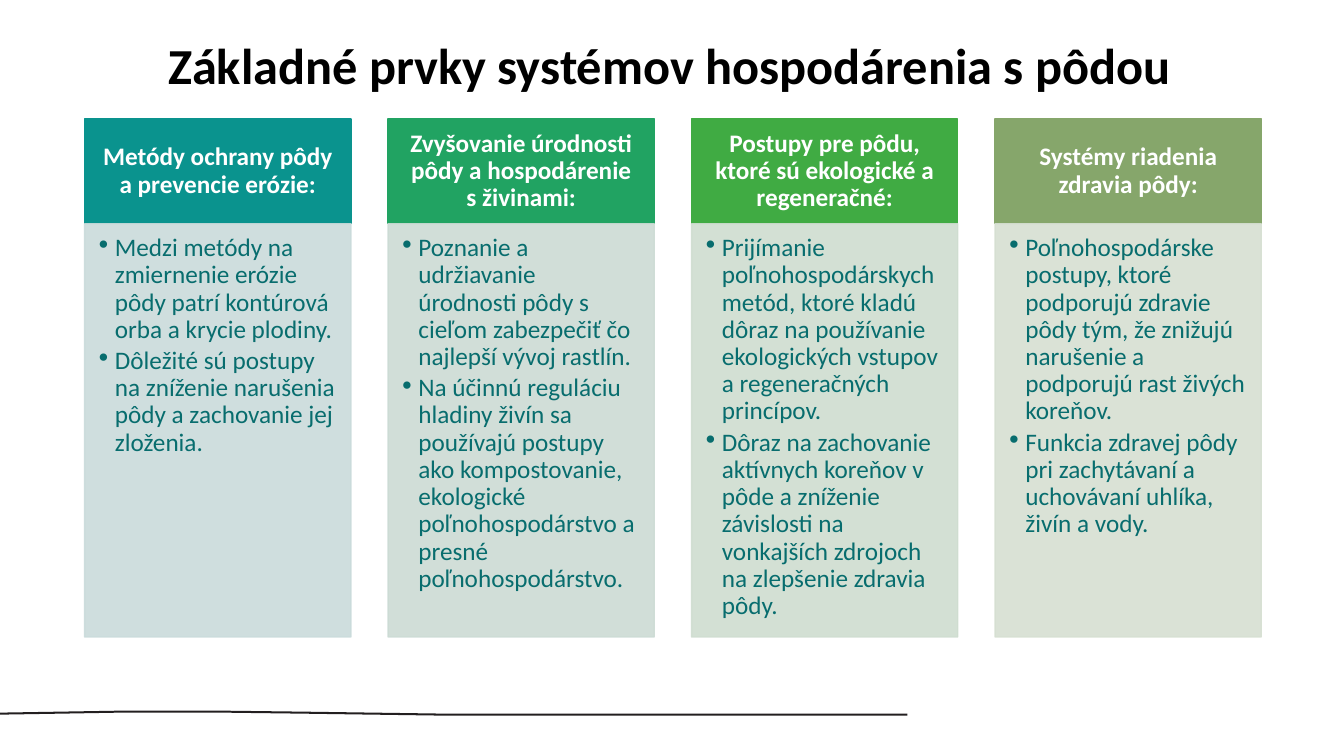
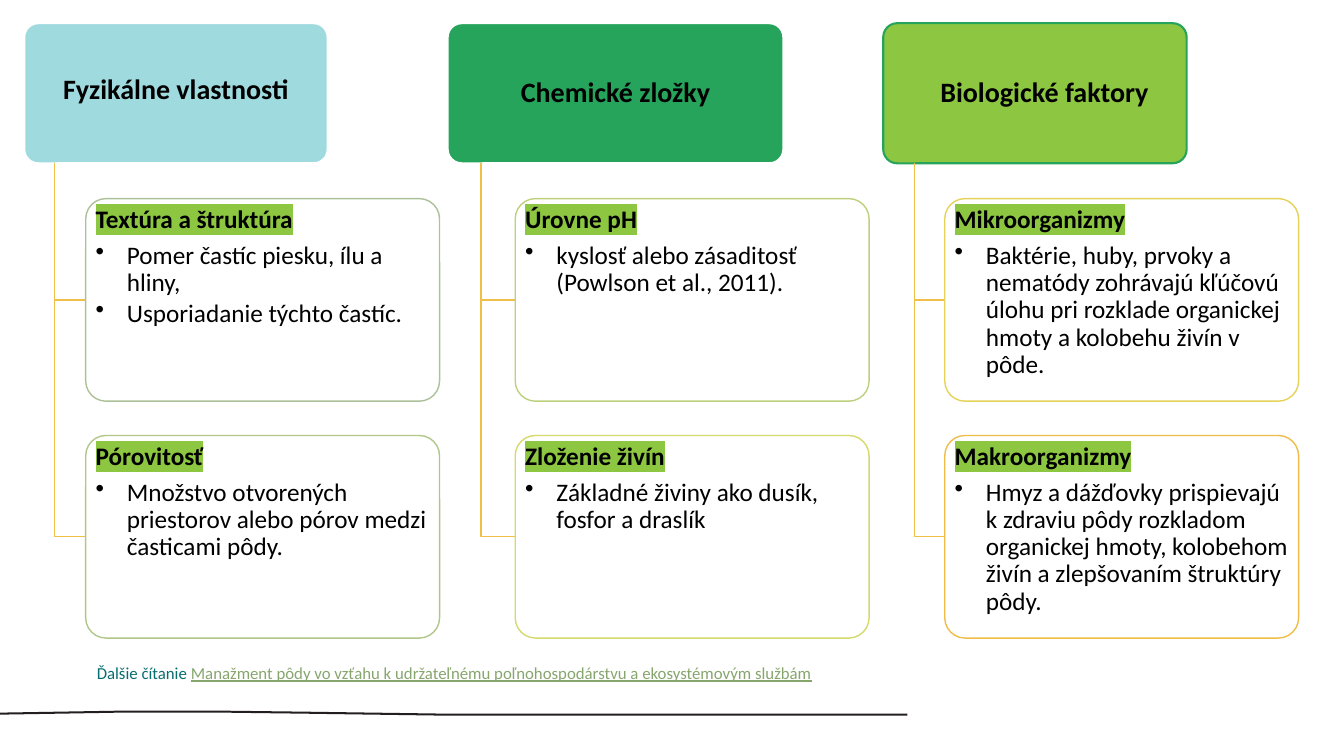
from pptx import Presentation
from pptx.dml.color import RGBColor
from pptx.enum.shapes import MSO_SHAPE as Preset
from pptx.enum.text import MSO_ANCHOR as Anchor, MSO_AUTO_SIZE as AutoSize, PP_ALIGN as Align
from pptx.oxml.ns import qn
from pptx.util import Inches, Pt
from lxml.etree import SubElement

FONT = "Calibri"
BLACK = RGBColor(0x00, 0x00, 0x00)
WHITE = RGBColor(0xFF, 0xFF, 0xFF)
INK = RGBColor(0x23, 0x1F, 0x20)
TEAL = RGBColor(0x08, 0x6D, 0x6E)
SAGE = RGBColor(0x87, 0xA6, 0x6E)
LIME = RGBColor(0x8D, 0xC6, 0x41)
GREEN = RGBColor(0x26, 0xA4, 0x5B)
AQUA = RGBColor(0x9F, 0xDA, 0xDF)
AMBER = RGBColor(0xEF, 0xBF, 0x47)

# Heading, heading colour, body colour, bullets
PRACTICES = [
    ("Metódy ochrany pôdy a prevencie erózie:",
     RGBColor(0x0A, 0x93, 0x8E), RGBColor(0xCA, 0xDB, 0xDB),
     ["Medzi metódy na zmiernenie erózie pôdy patrí kontúrová orba a krycie plodiny.",
      "Dôležité sú postupy na zníženie narušenia pôdy a zachovanie jej zloženia."]),
    ("Zvyšovanie úrodnosti pôdy a hospodárenie s živinami:",
     RGBColor(0x21, 0xA3, 0x62), RGBColor(0xCC, 0xDB, 0xD4),
     ["Poznanie a udržiavanie úrodnosti pôdy s cieľom zabezpečiť čo najlepší vývoj rastlín.",
      "Na účinnú reguláciu hladiny živín sa používajú postupy ako kompostovanie, "
      "ekologické poľnohospodárstvo a presné poľnohospodárstvo."]),
    ("Postupy pre pôdu, ktoré sú ekologické a regeneračné:",
     RGBColor(0x40, 0xAB, 0x43), RGBColor(0xCF, 0xDD, 0xD0),
     ["Prijímanie poľnohospodárskych metód, ktoré kladú dôraz na používanie "
      "ekologických vstupov a regeneračných princípov.",
      "Dôraz na zachovanie aktívnych koreňov v pôde a zníženie závislosti na "
      "vonkajších zdrojoch na zlepšenie zdravia pôdy."]),
    ("Systémy riadenia zdravia pôdy:",
     RGBColor(0x86, 0xA6, 0x6B), RGBColor(0xD6, 0xDF, 0xD2),
     ["Poľnohospodárske postupy, ktoré podporujú zdravie pôdy tým, že znižujú "
      "narušenie a podporujú rast živých koreňov.",
      "Funkcia zdravej pôdy pri zachytávaní a uchovávaní uhlíka, živín a vody."]),
]

# Heading, fill, line, heading box (left, width), heading insets, trunk x, card left, cards
FACTORS = [
    ("Fyzikálne vlastnosti", AQUA, WHITE, (0.24, 3.01), (0.04, 0.02, 0.04, 0.08), 0.54, 0.85, [
        ("Textúra a štruktúra", RGBColor(0xAC, 0xC1, 0x99),
         ["Pomer častíc piesku, ílu a hliny,", "Usporiadanie týchto častíc."]),
        ("Pórovitosť", RGBColor(0xB1, 0xC7, 0x8A),
         ["Množstvo otvorených priestorov alebo pórov medzi časticami pôdy."])]),
    ("Chemické zložky", GREEN, WHITE, (4.44, 3.33), (0.04, 0.02, 0.04, 0.02), 4.77, 5.11, [
        ("Úrovne pH", RGBColor(0xBD, 0xD0, 0x7B),
         ["kyslosť alebo zásaditosť (Powlson et al., 2011)."]),
        ("Zloženie živín", RGBColor(0xD4, 0xDA, 0x6B),
         ["Základné živiny ako dusík, fosfor a draslík"])]),
    ("Biologické faktory", LIME, GREEN, (8.76, 3.01), (0.23, 0.02, 0.04, 0.02), 9.07, 9.37, [
        ("Mikroorganizmy", RGBColor(0xE4, 0xD2, 0x5A),
         ["Baktérie, huby, prvoky a nematódy zohrávajú kľúčovú úlohu pri rozklade "
          "organickej hmoty a kolobehu živín v pôde."]),
        ("Makroorganizmy", RGBColor(0xEF, 0xBD, 0x48),
         ["Hmyz a dážďovky prispievajú k zdraviu pôdy rozkladom organickej hmoty, "
          "kolobehom živín a zlepšovaním štruktúry pôdy."])]),
]


# Shared drawing helpers
def fade(shape):
    """Make the colours set so far 90 % opaque."""
    for colour in shape.element.spPr.iter(qn("a:srgbClr")):
        SubElement(colour, qn("a:alpha"), val="90000")


def add_box(page, preset, left, top, width, height, fill):
    box = page.shapes.add_shape(preset, Inches(left), Inches(top), Inches(width), Inches(height))
    box.shadow.inherit = False
    box.fill.solid()
    box.fill.fore_color.rgb = fill
    if preset == Preset.ROUNDED_RECTANGLE:
        box.adjustments[0] = 0.1
    return box


def set_line(shape, colour, width=1):
    shape.line.color.rgb = colour
    shape.line.width = Pt(width)


def set_frame(shape, insets, anchor):
    frame = shape.text_frame
    frame.word_wrap = True
    frame.auto_size = AutoSize.NONE
    frame.vertical_anchor = anchor
    (frame.margin_left, frame.margin_top,
     frame.margin_right, frame.margin_bottom) = map(Inches, insets)
    return frame


def add_para(frame, first=False, align=Align.LEFT, before=0):
    para = frame.paragraphs[0] if first else frame.add_paragraph()
    para.alignment = align
    para.line_spacing = 0.9
    if before:
        para.space_before = Pt(before)
    return para


def add_span(para, text, size, colour, bold=False, highlight=None):
    span = para.add_run()
    span.text = text
    font = span.font
    font.name, font.size, font.bold = FONT, Pt(size), bold
    font.color.rgb = colour
    if highlight is not None:
        props = span._r.get_or_add_rPr()
        mark = SubElement(props, qn("a:highlight"))
        SubElement(mark, qn("a:srgbClr"), val=str(highlight))
        props.find(qn("a:solidFill")).addnext(mark)
    return span


def indent(para, hang, bullet=None, colour=BLACK):
    props = para._p.get_or_add_pPr()
    props.set("marL", str(Inches(hang)))
    if bullet:
        props.set("indent", str(-Inches(hang)))
        tint = SubElement(props, qn("a:buClr"))
        SubElement(tint, qn("a:srgbClr"), val=str(colour))
        SubElement(props, qn("a:buChar"), char=bullet)


def add_heading(box, text, size, colour, insets):
    frame = set_frame(box, insets, Anchor.MIDDLE)
    add_span(add_para(frame, True, Align.CENTER), text, size, colour, bold=True)


def add_path(page, points):
    start, *rest = [(Inches(x), Inches(y)) for x, y in points]
    builder = page.shapes.build_freeform(*start)
    builder.add_line_segments(rest, close=False)
    path = builder.convert_to_shape()
    path.shadow.inherit = False
    return path


def add_master_wave(deck, page):
    """Draw the bottom line and hand it to the master, so every slide shows it."""
    upper = [(0, 7.07), (0.6, 7.06), (1.2, 7.05), (2.2, 7.05),
             (3, 7.06), (3.7, 7.07), (4.43, 7.08), (9, 7.08)]
    lower = [(x, y + 0.02) for x, y in reversed(upper)]
    wave = add_path(page, upper + lower + upper[:1])
    wave.fill.solid()
    wave.fill.fore_color.rgb = INK
    wave.line.fill.background()
    deck.slide_master.shapes.element.append(wave.element)


# Slide 1: four columns
def add_title(page, text):
    title = page.shapes.title
    title.left, title.top, title.width, title.height = map(Inches, (0.73, 0.28, 11.83, 0.71))
    frame = set_frame(title, (0.1, 0.05, 0.1, 0.05), Anchor.MIDDLE)
    para = frame.paragraphs[0]
    para.alignment = Align.CENTER
    add_span(para, text, 36, BLACK, bold=True)


def add_practice(page, left, top, width, practice):
    heading, strong, pale, bullets = practice
    head_height, body_height = 1.04, 4.1
    head = add_box(page, Preset.RECTANGLE, left, top, width, head_height, strong)
    set_line(head, strong)
    add_heading(head, heading, 18, WHITE, (0.15, 0.08, 0.15, 0.08))

    body = add_box(page, Preset.RECTANGLE, left, top + head_height, width, body_height, pale)
    set_line(body, pale)
    fade(body)
    frame = set_frame(body, (0.11, 0.11, 0.15, 0.17), Anchor.TOP)
    for number, text in enumerate(bullets):
        para = add_para(frame, number == 0, before=2.9 if number else 0)
        indent(para, 0.19, "∙", TEAL)
        add_span(para, text, 18, TEAL)


def build_practices(page):
    add_title(page, "Základné prvky systémov hospodárenia s pôdou")
    width, gap = 2.64, 0.37
    for number, practice in enumerate(PRACTICES):
        add_practice(page, 0.84 + number * (width + gap), 1.18, width, practice)


# Slide 2: three trees of cards
def add_card(page, left, top, width, height, card):
    heading, outline, bullets = card
    box = add_box(page, Preset.ROUNDED_RECTANGLE, left, top, width, height, WHITE)
    fade(box)
    set_line(box, outline)
    frame = set_frame(box, (0.04, 0.02, 0.03, 0.02), Anchor.TOP)
    add_span(add_para(frame, True), heading, 18, BLACK, bold=True, highlight=LIME)
    for number, text in enumerate(bullets):
        para = add_para(frame, before=2.7 if number else 6.3)
        indent(para, 0.31, "•")
        add_span(para, text, 18, BLACK)


def add_factor(page, top, factor):
    heading, fill, outline, (left, width), insets, trunk, card_left, cards = factor
    head_height, card_height, card_step = 1.39, 2.01, 2.35
    head = add_box(page, Preset.ROUNDED_RECTANGLE, left, top, width, head_height, fill)
    set_line(head, outline, 1.5)
    add_heading(head, heading, 20, BLACK, insets)

    head_bottom = top + head_height
    for number, card in enumerate(cards):
        card_top = head_bottom + 0.35 + number * card_step
        middle = card_top + card_height / 2
        elbow = add_path(page, [(trunk, head_bottom), (trunk, middle), (card_left, middle)])
        elbow.fill.background()
        set_line(elbow, AMBER)
        add_card(page, card_left, card_top, 3.51, card_height, card)


def add_reading(page, left, top, width, height):
    box = page.shapes.add_textbox(Inches(left), Inches(top), Inches(width), Inches(height))
    frame = set_frame(box, (0.19, 0.02, 0.02, 0.02), Anchor.MIDDLE)
    para = add_para(frame, True)
    indent(para, 0.25)
    add_span(para, "Ďalšie čítanie ", 12, TEAL)
    source = add_span(para, "Manažment pôdy vo vzťahu k udržateľnému poľnohospodárstvu "
                            "a ekosystémovým službám", 12, SAGE)
    source.font.underline = True


def build_factors(page):
    for factor in FACTORS:
        add_factor(page, 0.23, factor)
    add_reading(page, 0.52, 6.27, 8.24, 0.83)


def main():
    deck = Presentation()
    deck.slide_width, deck.slide_height = Inches(13.33), Inches(7.5)
    title_only, blank = deck.slide_layouts[5], deck.slide_layouts[6]
    practices = deck.slides.add_slide(title_only)
    add_master_wave(deck, practices)
    build_practices(practices)
    build_factors(deck.slides.add_slide(blank))
    deck.save("out.pptx")


if __name__ == "__main__":
    main()
